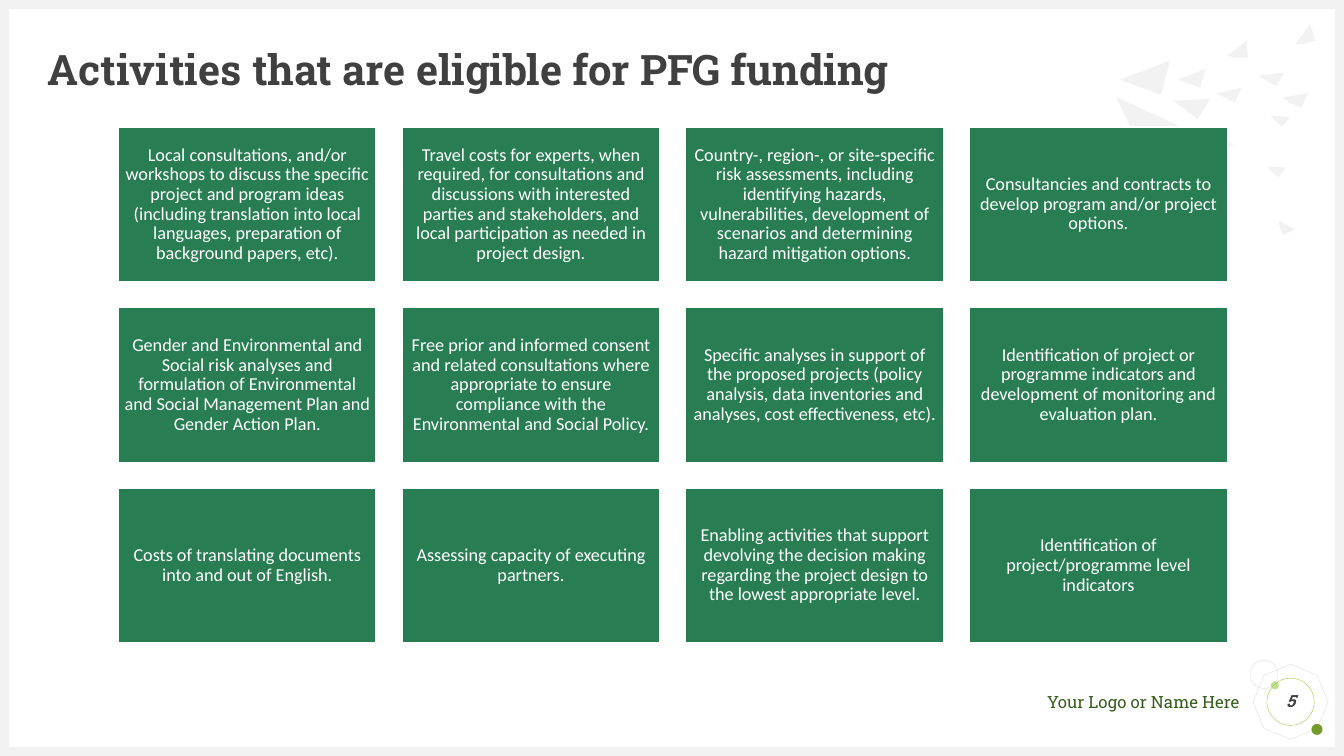
from pptx import Presentation
from pptx.dml.color import RGBColor
from pptx.enum.shapes import MSO_SHAPE as Preset
from pptx.enum.text import MSO_ANCHOR as Anchor, PP_ALIGN as Align
from pptx.util import Cm, Pt

COLORS = {
    "white": "FFFFFF", "pale": "F2F2F2", "grey": "D9D9D9", "dark": "404040",
    "green": "297D53", "forest": "375C1E",
    "lime": "9ACB39", "light_lime": "C2E088", "olive": "749A29",
}
HEADING_FONT = "Roboto Slab"


def paint(shape, fill=None, line=None, width=0.25):
    shape.shadow.inherit = False
    if fill:
        shape.fill.solid()
        shape.fill.fore_color.rgb = RGBColor.from_string(COLORS[fill])
    else:
        shape.fill.background()
    if line:
        shape.line.color.rgb = RGBColor.from_string(COLORS[line])
        shape.line.width = Pt(width)
    else:
        shape.line.fill.background()


def write(shape, text, size, font, color, align, inset=0, bold=False, italic=False):
    frame = shape.text_frame
    frame.word_wrap = True
    frame.vertical_anchor = Anchor.MIDDLE
    frame.margin_left = frame.margin_right = Cm(inset)
    frame.margin_top = frame.margin_bottom = Cm(inset)
    frame.text = text
    paragraph = frame.paragraphs[0]
    paragraph.alignment = align
    paragraph.line_spacing = 0.9
    paragraph.font.size = Pt(size)
    paragraph.font.name = font
    paragraph.font.bold = bold
    paragraph.font.italic = italic
    paragraph.font.color.rgb = RGBColor.from_string(COLORS[color])


presentation = Presentation()
presentation.slide_width = Cm(33.87)
presentation.slide_height = Cm(19.05)
slide = presentation.slides.add_slide(presentation.slide_layouts[5])
shapes = slide.shapes

# Border around the slide
for left, top, width, height in [
    (0, 18.82, 33.87, 0.23), (0, 0, 33.87, 0.23),
    (0, 0, 0.23, 19.05), (33.64, 0, 0.23, 19.05),
]:
    bar = shapes.add_shape(Preset.RECTANGLE, Cm(left), Cm(top), Cm(width), Cm(height))
    paint(bar, "pale")

# Scattered shards, top right (points in cm)
shards = [
    [(29.49, 1.52), (29.26, 2.39), (28.22, 2.01)],
    [(30.51, 2.49), (30.18, 3), (29.57, 2.54)],
    [(30.38, 1.73), (30.25, 2.21), (29.69, 2.01)],
    [(31.29, 2.21), (31.12, 2.59), (30.66, 2.36)],
    [(31.42, 1.02), (31.45, 1.45), (31.09, 1.45), (30.94, 1.4)],
    [(32.51, 2.95), (32.31, 3.2), (32.11, 3.02), (32.03, 2.92)],
    [(33.02, 0.61), (33.15, 1.02), (32.82, 1.12), (32.64, 1.12)],
    [(32.36, 1.83), (32.16, 2.18), (31.72, 1.91)],
    [(32.97, 2.34), (32.79, 2.72), (32.46, 2.57), (32.33, 2.46)],
    [(29.67, 3.15), (28.98, 4.22), (28.12, 2.44)],
    [(31.09, 3.63), (30.58, 3.99), (30.2, 3.35)],
    [(32.41, 4.22), (32.23, 4.47), (32, 4.29), (31.95, 4.19)],
    [(32.64, 5.79), (32.33, 5.92), (32.23, 5.66), (32.23, 5.56)],
]
for points in shards:
    corners = [(Cm(x), Cm(y)) for x, y in points]
    builder = shapes.build_freeform(*corners[0])
    builder.add_line_segments(corners[1:], close=True)
    paint(builder.convert_to_shape(), "pale")

# Title
title = shapes.title
title.left, title.top, title.width, title.height = Cm(1.2), Cm(1.2), Cm(31.5), Cm(1.2)
write(title, "Activities that are eligible for PFG funding", 30, HEADING_FONT,
      "dark", Align.LEFT, bold=True)

# Footer text
footer = shapes.add_textbox(Cm(24.26), Cm(17.45), Cm(6.98), Cm(0.51))
write(footer, "Your Logo or Name Here", 12, HEADING_FONT, "forest", Align.RIGHT)

# Page number badge; the number ring comes last
for preset, left, top, size, fill, line, angle in [
    (Preset.OCTAGON, 31.65, 16.81, 1.75, None, "grey", 22.7),
    (Preset.OVAL, 32.03, 17.17, 0.2, "light_lime", None, 0),
    (Preset.OVAL, 33.05, 18.24, 0.28, "olive", None, 0),
    (Preset.OVAL, 31.5, 16.64, 0.71, None, "grey", 0),
    (Preset.OVAL, 31.93, 17.09, 1.19, None, "lime", 0),
]:
    badge = shapes.add_shape(preset, Cm(left), Cm(top), Cm(size), Cm(size))
    badge.rotation = angle
    paint(badge, fill, line)
write(badge, "5", 12, HEADING_FONT, "dark", Align.CENTER, bold=True, italic=True)

# Grid of activities, four to a row
activities = [
    "Local consultations, and/or workshops to discuss the specific project and program ideas "
    "(including translation into local languages, preparation of background papers, etc).",
    "Travel costs for experts, when required, for consultations and discussions with interested "
    "parties and stakeholders, and local participation as needed in project design.",
    "Country-, region-, or site-specific risk assessments, including identifying hazards, "
    "vulnerabilities, development of scenarios and determining hazard mitigation options.",
    "Consultancies and contracts to develop program and/or project options.",
    "Gender and Environmental and Social risk analyses and formulation of Environmental "
    "and Social Management Plan and Gender Action Plan.",
    "Free prior and informed consent and related consultations where appropriate to ensure "
    "compliance with the Environmental and Social Policy.",
    "Specific analyses in support of the proposed projects (policy analysis, data inventories "
    "and analyses, cost effectiveness, etc).",
    "Identification of project or programme indicators and development of monitoring and "
    "evaluation plan.",
    "Costs of translating documents into and out of English.",
    "Assessing capacity of executing partners.",
    "Enabling activities that support devolving the decision making regarding the project "
    "design to the lowest appropriate level.",
    "Identification of project/programme level indicators",
]
for index, activity in enumerate(activities):
    row, column = divmod(index, 4)
    box = shapes.add_shape(Preset.RECTANGLE, Cm(2.98 + 7.15 * column), Cm(3.2 + 4.55 * row),
                           Cm(6.5), Cm(3.9))
    paint(box, "green", "white", 1)
    write(box, activity, 13, "Calibri", "white", Align.CENTER, inset=0.13)

presentation.save("out.pptx")
